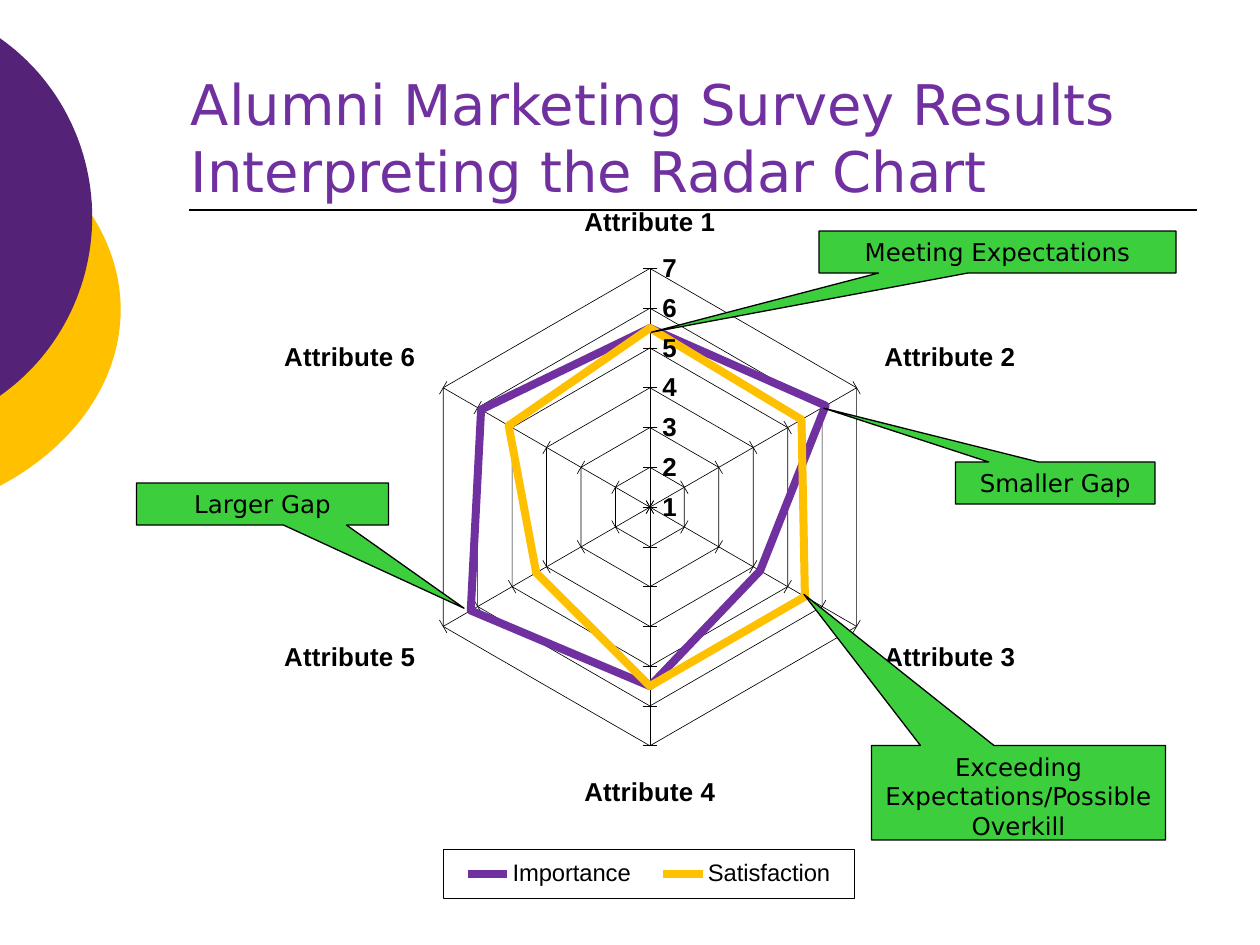
from math import acos, cos, sin

from lxml import etree
from pptx import Presentation
from pptx.chart.data import CategoryChartData
from pptx.dml.color import RGBColor
from pptx.enum.chart import XL_CHART_TYPE, XL_LEGEND_POSITION, XL_TICK_MARK
from pptx.enum.shapes import MSO_CONNECTOR, MSO_SHAPE
from pptx.enum.text import MSO_ANCHOR, MSO_AUTO_SIZE, PP_ALIGN
from pptx.oxml import parse_xml
from pptx.oxml.ns import nsdecls, qn
from pptx.util import Pt

RADAR = XL_CHART_TYPE.RADAR
BOTTOM = XL_LEGEND_POSITION.BOTTOM
CROSS, OUTSIDE = XL_TICK_MARK.CROSS, XL_TICK_MARK.OUTSIDE
STRAIGHT = MSO_CONNECTOR.STRAIGHT
CALLOUT = MSO_SHAPE.RECTANGULAR_CALLOUT
TOP = MSO_ANCHOR.TOP
LEFT, CENTER = PP_ALIGN.LEFT, PP_ALIGN.CENTER
GROW = MSO_AUTO_SIZE.SHAPE_TO_FIT_TEXT

THEME = {
    "black": RGBColor.from_string("000000"),
    "purple": RGBColor.from_string("7030A0"),
    "dark_purple": RGBColor.from_string("542378"),
    "gold": RGBColor.from_string("FFC000"),
    "green": RGBColor.from_string("3DCE3D"),
    "font": "DejaVu Sans",
    "chart_font": "Arial",
    "title": 32,
    "callout": 14,
    "axis": 14.8,
    "legend": 13.6,
}


def write(sp, text, size, color, align=LEFT, wrap=True):
    tf = sp.text_frame
    tf.word_wrap = wrap
    tf.vertical_anchor = TOP
    for i, line in enumerate(text.split("\n")):
        p = tf.add_paragraph() if i else tf.paragraphs[0]
        p.alignment = align
        r = p.add_run()
        r.text = line
        r.font.name = THEME["font"]
        r.font.size = Pt(size)
        r.font.color.rgb = color


def manual_layout(x, y, w, h, target=""):
    modes = '<c:xMode val="edge"/><c:yMode val="edge"/>'
    sizes = f'<c:x val="{x}"/><c:y val="{y}"/><c:w val="{w}"/><c:h val="{h}"/>'
    return parse_xml(
        f'<c:layout {nsdecls("c")}><c:manualLayout>{target}{modes}{sizes}'
        "</c:manualLayout></c:layout>"
    )


prs = Presentation()
prs.slide_width, prs.slide_height = Pt(720), Pt(540)
s = prs.slides.add_slide(prs.slide_layouts[6])

ellipses = [
    (-93, 177, 162, 123, THEME["gold"]),
    (-69, 124, 121.7, 124, THEME["dark_purple"]),
]
STEPS = 60
for cx, cy, rx, ry, color in ellipses:
    edge = acos(-cx / rx)
    angles = [edge * (2 * i / STEPS - 1) for i in range(STEPS + 1)]
    points = [(Pt(cx + rx * cos(a)), Pt(cy + ry * sin(a))) for a in angles]
    fb = s.shapes.build_freeform(*points[0])
    fb.add_line_segments(points[1:], close=True)
    sp = fb.convert_to_shape()
    sp.shadow.inherit = False
    sp.fill.solid()
    sp.fill.fore_color.rgb = color
    sp.line.fill.background()

rule = s.shapes.add_connector(STRAIGHT, Pt(108), Pt(120), Pt(684), Pt(120))
rule.line.color.rgb = THEME["black"]
rule.line.width = Pt(1)
etree.SubElement(rule._element.spPr, qn("a:effectLst"))

data = CategoryChartData(number_format="0.0")
data.categories = [f"Attribute {n}" for n in range(1, 7)]
data.add_series("Importance", (5.5, 6.1, 4.2, 5.5, 6.2, 5.9))
data.add_series("Satisfaction", (5.5, 5.4, 5.5, 5.5, 4.3, 5.1))
chart = s.shapes.add_chart(RADAR, Pt(78), Pt(96), Pt(588), Pt(420.5), data).chart
chart.has_title = False
chart.font.name = THEME["chart_font"]
chart.font.size = Pt(THEME["axis"])
chart.font.color.rgb = THEME["black"]
plot = chart.plots[0]
plot.vary_by_categories = False
for series, color in zip(plot.series, (THEME["purple"], THEME["gold"])):
    series.format.line.color.rgb = color
    series.format.line.width = Pt(4.57)

for axis, tick in ((chart.category_axis, OUTSIDE), (chart.value_axis, CROSS)):
    axis.has_major_gridlines = True
    axis.major_tick_mark = tick
    for line in (axis.format.line, axis.major_gridlines.format.line):
        line.color.rgb = THEME["black"]
        line.width = Pt(0.38)
    font = axis.tick_labels.font
    font.name = THEME["chart_font"]
    font.size = Pt(THEME["axis"])
    font.bold = True
    font.color.rgb = THEME["black"]
value_axis = chart.value_axis
value_axis.minimum_scale, value_axis.maximum_scale = 1, 7
value_axis.major_unit = 1
value_axis.tick_labels.number_format = "0"
value_axis.tick_labels.number_format_is_linked = False

chart.has_legend = True
legend = chart.legend
legend.position = BOTTOM
legend.include_in_layout = False
legend.font.name = THEME["chart_font"]
legend.font.size = Pt(THEME["legend"])
legend.font.color.rgb = THEME["black"]

plot_area = chart._chartSpace.chart.plotArea
for old in plot_area.findall(qn("c:layout")):
    plot_area.remove(old)
plot_area.insert(0, manual_layout(0.267, 0.135, 0.464, 0.652, '<c:layoutTarget val="inner"/>'))
box = legend._element
for old in box.findall(qn("c:layout")):
    box.remove(old)
box.find(qn("c:legendPos")).addnext(manual_layout(0.298, 0.926, 0.4, 0.066))
box.find(qn("c:overlay")).addnext(parse_xml(
    f'<c:spPr {nsdecls("c", "a")}><a:ln w="{Pt(0.38)}"><a:solidFill>'
    f'<a:srgbClr val="{THEME["black"]}"/></a:solidFill></a:ln></c:spPr>'
))

callouts = [
    ("Meeting Expectations", 468, 132, 204, 24, -0.97, 1.91),
    ("Smaller Gap", 546, 264, 114, 24, -1.16, -1.78),
    ("Larger Gap", 78, 276, 144, 24, 0.8, 2.48),
    ("Exceeding Expectations/Possible Overkill", 498, 426, 168, 54, -0.73, -2.1),
]
for text, x, y, w, h, tip_x, tip_y in callouts:
    sp = s.shapes.add_shape(CALLOUT, Pt(x), Pt(y), Pt(w), Pt(h))
    sp.adjustments[0], sp.adjustments[1] = tip_x, tip_y
    sp.shadow.inherit = False
    sp.fill.solid()
    sp.fill.fore_color.rgb = THEME["green"]
    sp.line.color.rgb = THEME["black"]
    sp.line.width = Pt(0.75)
    write(sp, text, size=THEME["callout"], color=THEME["black"], align=CENTER)

title = s.shapes.add_textbox(Pt(102), Pt(36), Pt(551.5), Pt(85))
title.text_frame.auto_size = GROW
write(title, "Alumni Marketing Survey Results\nInterpreting the Radar Chart",
      size=THEME["title"], color=THEME["purple"], wrap=False)

prs.save("out.pptx")
